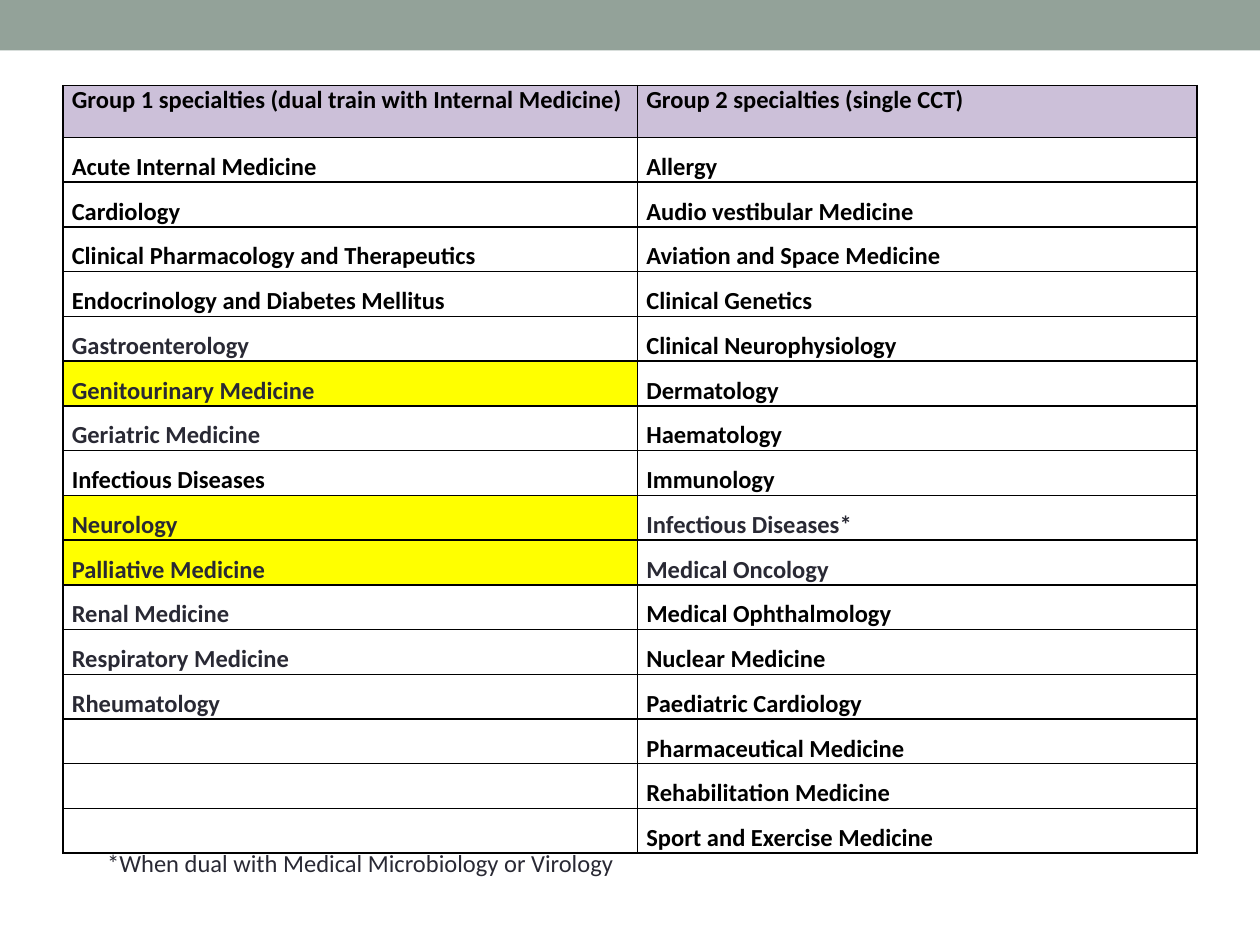
from itertools import zip_longest

from lxml import etree
from pptx import Presentation
from pptx.dml.color import RGBColor
from pptx.enum.shapes import MSO_SHAPE
from pptx.oxml.ns import qn
from pptx.util import Inches, Pt

RECT = MSO_SHAPE.RECTANGLE

BLACK, DARK = "000000", "292934"
GREEN, LILAC, YELLOW = "93A299", "CCC0D9", "FFFF00"

HEADERS = [
    "Group 1 specialties (dual train with Internal Medicine)",
    "Group 2 specialties (single CCT)",
]
GROUP_1 = [
    "Acute Internal Medicine", "Cardiology",
    "Clinical Pharmacology and Therapeutics",
    "Endocrinology and Diabetes Mellitus", "Gastroenterology",
    "Genitourinary Medicine", "Geriatric Medicine", "Infectious Diseases",
    "Neurology", "Palliative Medicine", "Renal Medicine",
    "Respiratory Medicine", "Rheumatology",
]
GROUP_2 = [
    "Allergy", "Audio vestibular Medicine", "Aviation and Space Medicine",
    "Clinical Genetics", "Clinical Neurophysiology", "Dermatology",
    "Haematology", "Immunology", "Infectious Diseases*", "Medical Oncology",
    "Medical Ophthalmology", "Nuclear Medicine", "Paediatric Cardiology",
    "Pharmaceutical Medicine", "Rehabilitation Medicine",
    "Sport and Exercise Medicine",
]
HIGHLIGHTED = {"Genitourinary Medicine", "Neurology", "Palliative Medicine"}
DARK_TEXT = HIGHLIGHTED | {
    "Gastroenterology", "Geriatric Medicine", "Renal Medicine",
    "Respiratory Medicine", "Rheumatology", "Infectious Diseases*",
    "Medical Oncology",
}


def rgb(value):
    return RGBColor.from_string(value)


class SlideBuilder:
    font = "Calibri"
    size = 14

    def __init__(self, s):
        self.s = s

    def bar(self, x, y, w, h, color):
        sp = self.s.shapes.add_shape(RECT, Inches(x), Inches(y), Inches(w), Inches(h))
        sp.shadow.inherit = False
        sp.fill.solid()
        sp.fill.fore_color.rgb = rgb(color)
        sp.line.fill.background()

    def run(self, p, text, color, bold=False):
        r = p.add_run()
        r.text = text
        r.font.name = self.font
        r.font.size = Pt(self.size)
        r.font.bold = bold
        r.font.color.rgb = rgb(color)

    def text(self, x, y, w, h, text, color, left, top):
        tf = self.s.shapes.add_textbox(Inches(x), Inches(y), Inches(w), Inches(h)).text_frame
        tf.word_wrap = True
        tf.margin_left, tf.margin_top = Inches(left), Inches(top)
        tf.margin_right = tf.margin_bottom = Inches(0.05)
        self.run(tf.paragraphs[0], text, color)

    def borders(self, cell, color):
        tcPr = cell._tc.get_or_add_tcPr()
        for side in ("a:lnL", "a:lnR", "a:lnT", "a:lnB"):
            ln = etree.SubElement(tcPr, qn(side), w=str(Pt(1)))
            fill = etree.SubElement(ln, qn("a:solidFill"))
            etree.SubElement(fill, qn("a:srgbClr"), val=color)

    def cell(self, cell, text, color, fill=None, spacing=None):
        cell.margin_left = cell.margin_right = Inches(0.07)
        cell.margin_top = cell.margin_bottom = 0
        self.borders(cell, BLACK)
        if fill:
            cell.fill.solid()
            cell.fill.fore_color.rgb = rgb(fill)
        else:
            cell.fill.background()
        p = cell.text_frame.paragraphs[0]
        p.font.size = Pt(self.size)
        if text:
            p.line_spacing = spacing
            self.run(p, text, color, bold=True)

    def table(self, x, y, widths, header_h, row_h, headers, rows):
        height = header_h + row_h * len(rows)
        table = self.s.shapes.add_table(
            len(rows) + 1, len(widths), Inches(x), Inches(y),
            Inches(sum(widths)), Inches(height)).table
        table.first_row = table.horz_banding = False
        for column, width in zip(table.columns, widths):
            column.width = Inches(width)
        for i, row in enumerate(table.rows):
            row.height = Inches(row_h if i else header_h)
        for j, header in enumerate(headers):
            self.cell(table.cell(0, j), header, BLACK, LILAC)
        for i, row in enumerate(rows, 1):
            for j, name in enumerate(row):
                self.cell(table.cell(i, j), name,
                          DARK if name in DARK_TEXT else BLACK,
                          YELLOW if name in HIGHLIGHTED else None, 1.5)


def main():
    prs = Presentation()
    prs.slide_width, prs.slide_height = Inches(10), Inches(7.5)
    b = SlideBuilder(prs.slides.add_slide(prs.slide_layouts[6]))

    # Top band
    b.bar(0, 0, 10, 0.4, GREEN)

    # Specialties by group
    rows = list(zip_longest(GROUP_1, GROUP_2, fillvalue=""))
    b.table(0.5, 0.68, [4.56, 4.44], 0.41, 0.35, HEADERS, rows)

    # Footnote
    b.text(0.61, 6.54, 4.45, 0.74,
           "*When dual with Medical Microbiology or Virology", DARK,
           left=0.24, top=0.19)

    prs.save("out.pptx")


if __name__ == "__main__":
    main()
